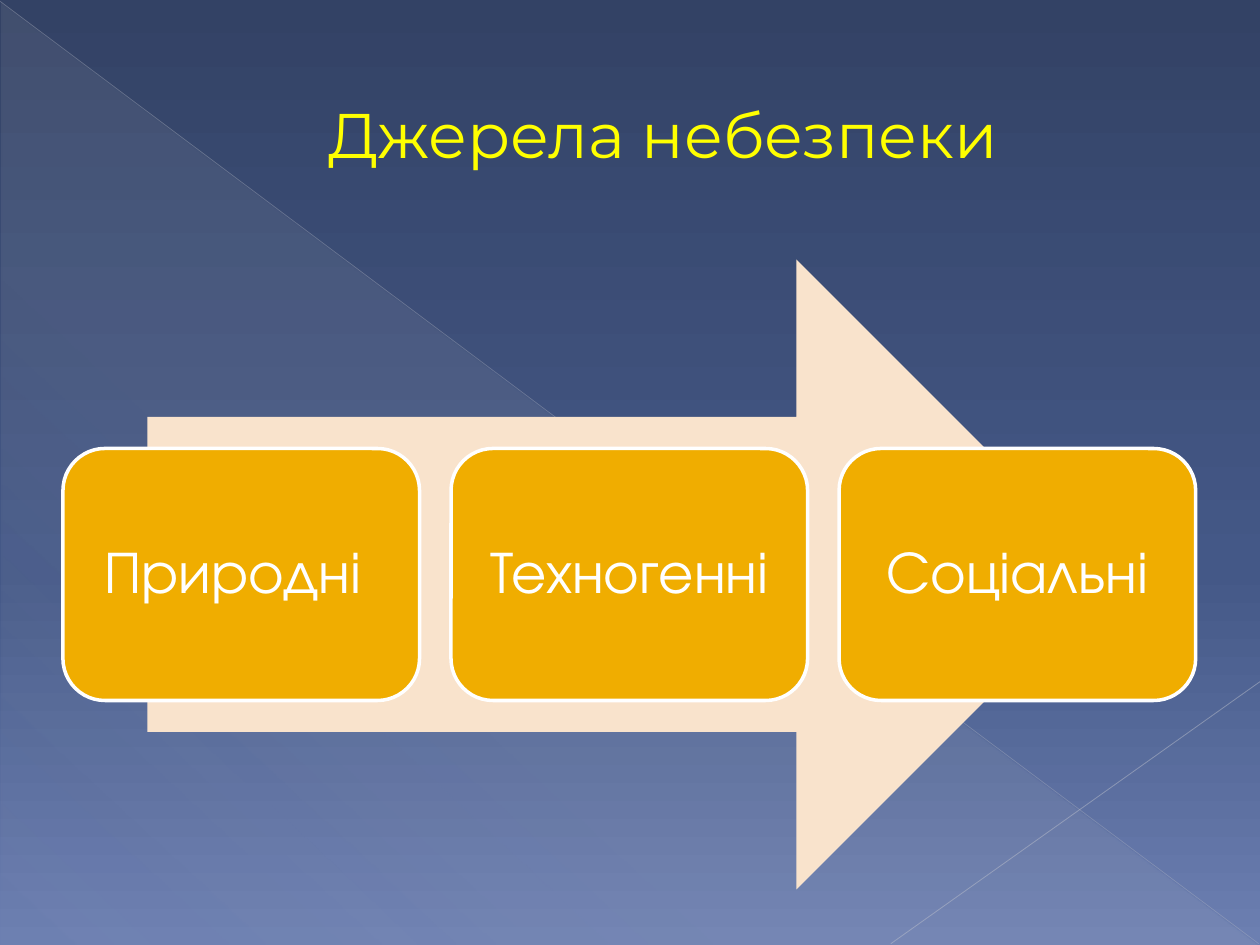
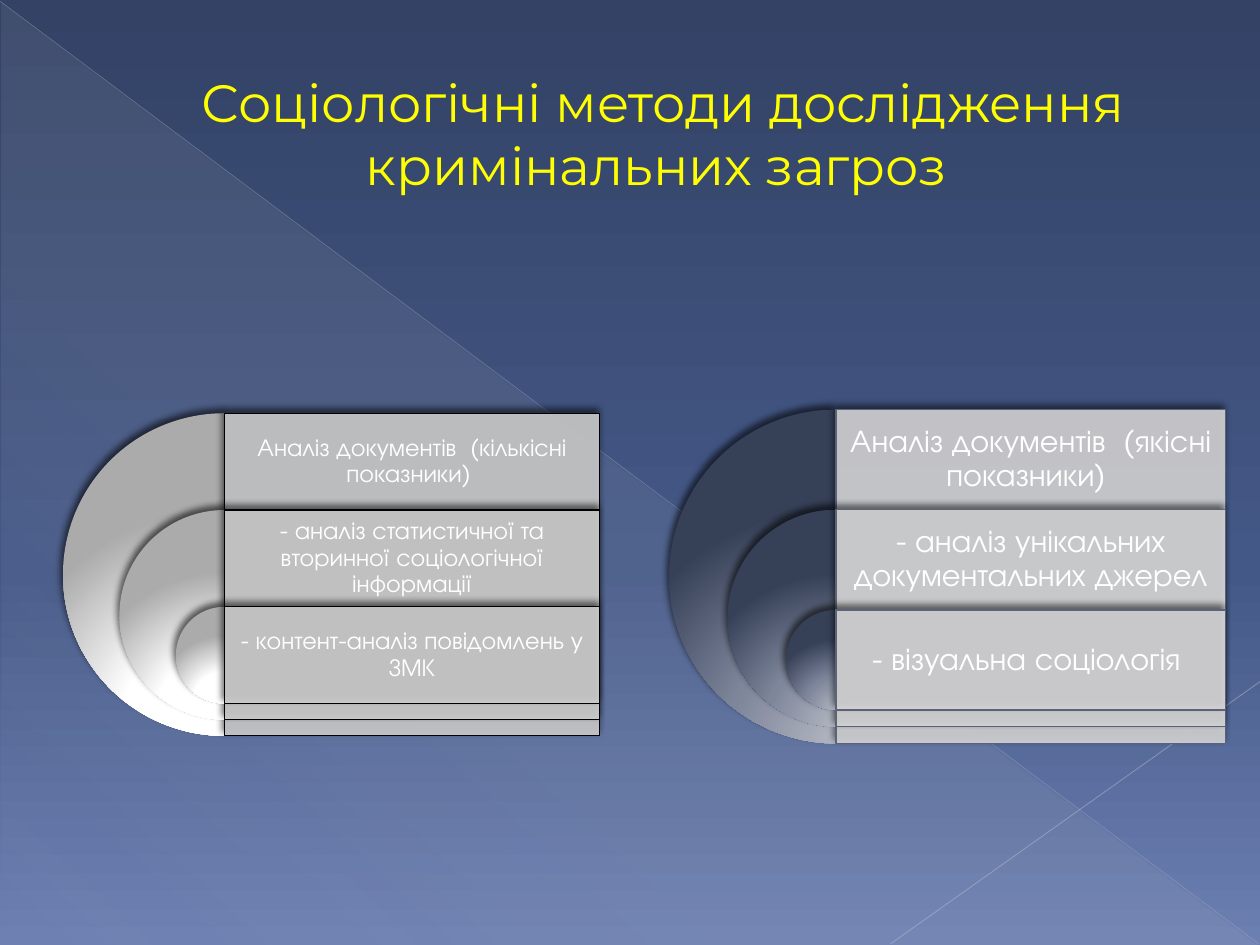
from dataclasses import dataclass

from lxml import etree
from pptx import Presentation
from pptx.dml.color import RGBColor
from pptx.enum import shapes, text
from pptx.oxml import ns
from pptx.util import Inches, Pt

# Colours
SKY = [(0, RGBColor(0x33, 0x42, 0x65)), (60, RGBColor(0x44, 0x58, 0x87)),
       (100, RGBColor(0x6C, 0x7F, 0xB1))]
HAZE = RGBColor(0xD4, 0xD4, 0xD6)
RAY_LONG = RGBColor(0xB9, 0xBD, 0xC8)
RAY_SHORT = RGBColor(0xC1, 0xC4, 0xCE)
YELLOW = RGBColor(0xFF, 0xFF, 0x00)
BRONZE = RGBColor(0xA6, 0x78, 0x00)
AMBER = RGBColor(0xF0, 0xAD, 0x00)
PEACH = RGBColor(0xF9, 0xE3, 0xCC)
WHITE = RGBColor(0xFF, 0xFF, 0xFF)
BLACK = RGBColor(0x00, 0x00, 0x00)
SILVER = RGBColor(0xCC, 0xCC, 0xCC)
GREY = RGBColor(0xAB, 0xAB, 0xAB)
SLATE = RGBColor(0x5A, 0x63, 0x78)
STEEL = [(0, RGBColor(0xB2, 0xB6, 0xC0)), (46, RGBColor(0x7E, 0x86, 0x9B)),
         (100, RGBColor(0x36, 0x40, 0x57))]
CHROME = [(0, WHITE), (46, WHITE), (100, GREY)]

# Text formats
HEAD = {"name": "Montserrat", "bold": False}
BODY = {"name": "TeX Gyre Adventor", "bold": False}
FRAME = {"word_wrap": True, "auto_size": text.MSO_AUTO_SIZE.NONE,
         "vertical_anchor": text.MSO_ANCHOR.MIDDLE}
SIDES = ("margin_left", "margin_top", "margin_right", "margin_bottom")


@dataclass
class Ray:
    start: tuple[float, float]
    end: tuple[float, float]
    color: RGBColor
    width: float
    alpha: int


@dataclass
class Stack:
    left: float
    top: float
    size: float
    width: float
    stops: list
    fill: RGBColor
    edge: RGBColor
    points: int
    inset: float
    rows: list[str]


RAYS = [Ray((0, 0.01), (9.99, 7.49), RAY_LONG, 0.39, 35),
        Ray((10, 5.41), (7.07, 7.49), RAY_SHORT, 0.47, 45)]

CARDS = ["Природні ", "Техногенні", "Соціальні"]

STACKS = [
    Stack(0.5, 3.28, 2.56, 2.98, CHROME, SILVER, BLACK, 14, 0.06,
          ["Аналіз документів  (кількісні показники) ",
           "- аналіз статистичної та вторинної соціологічної інформації",
           "- контент-аналіз повідомлень у ЗМК"]),
    Stack(5.31, 3.25, 2.65, 3.09, STEEL, HAZE, SLATE, 18, 0.07,
          ["Аналіз документів  (якісні показники) ",
           "- аналіз унікальних документальних джерел",
           "- візуальна соціологія "]),
]


# XML helpers
def sub(host, tag: str, **attrs):
    return etree.SubElement(host, ns.qn(tag), {k: str(v) for k, v in attrs.items()})


def fade(host, alpha: int) -> None:
    """Give the first solid colour in host an opacity in percent."""
    sub(host.xpath(".//a:srgbClr")[0], "a:alpha", val=alpha * 1000)


def blend(host, stops: list, angle: int | None = None) -> None:
    """Swap the solid fill for a linear blend, or a round one without an angle."""
    solid = host.xpath(".//a:solidFill")[0]
    grad = etree.Element(ns.qn("a:gradFill"), rotWithShape="1")
    row = sub(grad, "a:gsLst")
    for pos, color, *alpha in stops:
        tone = sub(sub(row, "a:gs", pos=pos * 1000), "a:srgbClr", val=color)
        for part in alpha:
            sub(tone, "a:alpha", val=part * 1000)
    if angle is None:
        ring = sub(grad, "a:path", path="circle")
        sub(ring, "a:fillToRect", l=50000, t=155000, r=50000, b=-55000)
    else:
        sub(grad, "a:lin", ang=angle * 60000, scaled=0)
    solid.getparent().replace(solid, grad)


def shade(shape) -> None:
    """Cast a soft black shadow up and to the left."""
    effect = shape.element.spPr.find(ns.qn("a:effectLst"))
    cast = sub(effect, "a:outerShdw", blurRad=Pt(4), dist=Pt(3),
               dir=245 * 60000, rotWithShape=0)
    sub(sub(cast, "a:srgbClr", val=BLACK), "a:alpha", val=60000)


# Drawing helpers
def draw(slide, kind, box: tuple, fill: RGBColor,
         edge: RGBColor | None = None, width: float = 0.75):
    shape = slide.shapes.add_shape(kind, *map(Inches, box))
    shape.shadow.inherit = False
    shape.fill.solid()
    shape.fill.fore_color.rgb = fill
    if edge is None:
        shape.line.fill.background()
    else:
        shape.line.color.rgb = edge
        shape.line.width = Pt(width)
    return shape


def write(shape, words: str, font: dict, points: int, color: RGBColor):
    """Set centred text and return its paragraph."""
    frame = shape.text_frame
    for key, value in FRAME.items():
        setattr(frame, key, value)
    line = frame.paragraphs[0]
    line.alignment = text.PP_ALIGN.CENTER
    run = line.add_run()
    run.text = words
    for key, value in font.items():
        setattr(run.font, key, value)
    run.font.size = Pt(points)
    run.font.color.rgb = color
    return line


def label(shape, words: str, points: int, inset: float) -> None:
    for side in SIDES:
        setattr(shape.text_frame, side, Inches(inset))
    write(shape, words, BODY, points, WHITE).line_spacing = 0.9


def backdrop(deck, slide) -> None:
    """Draw the shared scenery and hand it to the master."""
    master = deck.slide_master
    master.background.fill.solid()
    master.background.fill.fore_color.rgb = SKY[0][1]
    blend(master.element.xpath(".//p:bgPr")[0], SKY, 90)

    haze = draw(slide, shapes.MSO_SHAPE.RIGHT_TRIANGLE, (0.01, 0.02, 9.98, 7.48), HAZE)
    blend(haze.element, [(0, HAZE, 10), (70, HAZE, 8), (100, HAZE, 1)], 133)
    parts = [haze]
    for ray in RAYS:
        line = slide.shapes.add_connector(
            shapes.MSO_CONNECTOR.STRAIGHT, *map(Inches, ray.start + ray.end))
        line.line.color.rgb = ray.color
        line.line.width = Pt(ray.width)
        fade(line.element, ray.alpha)
        sub(line.element.spPr, "a:effectLst")
        parts.append(line)
    for spot, part in enumerate(parts, 2):
        master.shapes.element.insert(spot, part.element)


def head(slide, words: str, points: int) -> None:
    title = slide.shapes.title
    place = {"left": 0.5, "top": 0.29, "width": 9, "height": 1.53}
    for key, value in place.items():
        setattr(title, key, Inches(value))
    line = write(title, words, HEAD, points, YELLOW)
    props = line._p.get_or_add_pPr()
    props.set("marL", str(Inches(0.53)))
    props.set("indent", "0")
    rim = etree.Element(ns.qn("a:ln"), w=str(Pt(0.5)))
    sub(sub(rim, "a:solidFill"), "a:srgbClr", val=BRONZE)
    line.runs[0].font._element.insert(0, rim)


def pile(slide, stack: Stack) -> None:
    """Draw nested half discs, each with its panel and text row."""
    row = 0.3 * stack.size
    mid = stack.left + stack.size / 2
    for step, words in enumerate(stack.rows):
        size = stack.size * (1 - 0.35 * step)
        top = stack.top + row * step
        disc = draw(slide, shapes.MSO_SHAPE.PIE,
                    (mid - size / 2, top, size, size), stack.fill)
        disc.adjustments[0], disc.adjustments[1] = 54, 162
        blend(disc.element, stack.stops)
        panel = draw(slide, shapes.MSO_SHAPE.RECTANGLE,
                     (mid, top, stack.width, size), stack.fill, stack.edge)
        fade(panel.element, 90)
        for shape in (disc, panel):
            shade(shape)
        box = slide.shapes.add_textbox(*map(Inches, (mid, top, stack.width, row)))
        label(box, words, stack.points, stack.inset)


def main() -> None:
    deck = Presentation()
    deck.slide_width, deck.slide_height = Inches(10), Inches(7.5)
    plain = deck.slide_layouts[5]

    # Slide 1: sources of danger
    slide = deck.slides.add_slide(plain)
    backdrop(deck, slide)
    head(slide, "Джерела небезпеки", 36)
    draw(slide, shapes.MSO_SHAPE.RIGHT_ARROW, (1.17, 2.06, 7.65, 5), PEACH)
    for step, words in enumerate(CARDS):
        card = draw(slide, shapes.MSO_SHAPE.ROUNDED_RECTANGLE,
                    (0.5 + 3.08 * step, 3.56, 2.83, 2), AMBER, WHITE, 2)
        label(card, words, 34, 0.04)

    # Slide 2: research methods
    slide = deck.slides.add_slide(plain)
    head(slide, "Соціологічні методи дослідження кримінальних загроз ", 30)
    for stack in STACKS:
        pile(slide, stack)

    deck.save("out.pptx")


if __name__ == "__main__":
    main()
